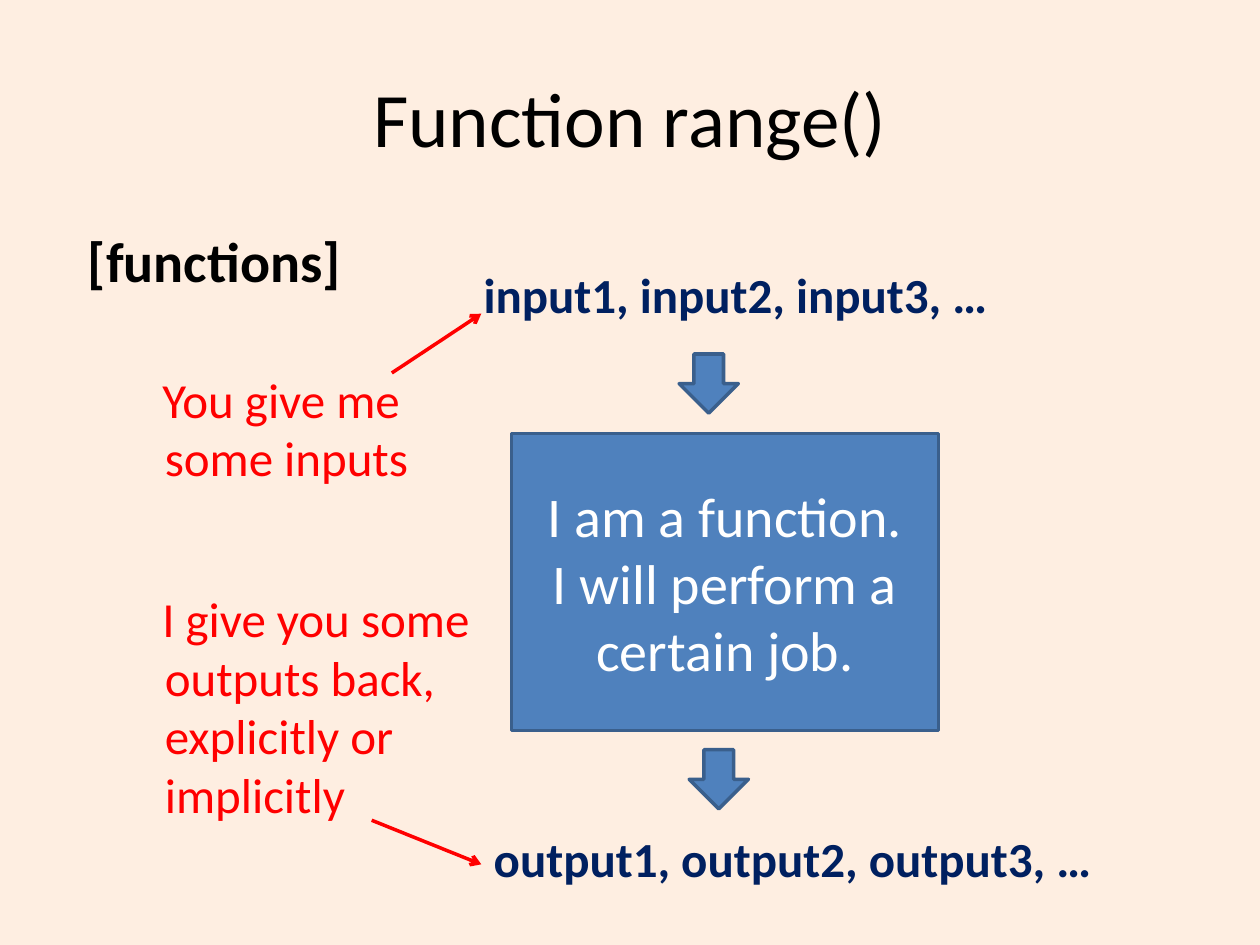
import dataclasses
import pptx
import pptx.util
import pptx.dml.color
import pptx.enum.shapes
import pptx.enum.text
import pptx.oxml
import pptx.oxml.ns

SHAPE = pptx.enum.shapes.MSO_SHAPE
ALIGN = pptx.enum.text.PP_ALIGN
ANCHOR = pptx.enum.text.MSO_ANCHOR
CELL = pptx.util.Inches(0.1)  # grid of 100 columns by 75 rows


@dataclasses.dataclass(frozen=True)
class Theme:
    font: str = "Calibri"
    page: str = "FEEEE1"
    ink: str = "000000"
    navy: str = "002060"
    red: str = "FF0000"
    blue: str = "4F81BD"
    edge: str = "3A5F8C"
    white: str = "FFFFFF"
    title: int = 44
    large: int = 32
    body: int = 28
    line: int = 2


@dataclasses.dataclass(frozen=True)
class Box:
    """A region, in columns and rows of the grid."""
    x: float
    y: float
    w: float
    h: float

    def inner(self, x, y, w, h):
        return Box(self.x + x, self.y + y, w, h)

    def place(self):
        return [round(v * CELL) for v in (self.x, self.y, self.w, self.h)]


THEME = Theme()


def color(code):
    return pptx.dml.color.RGBColor.from_string(code)


def write(frame, lines, size, tint, bold=False, align=ALIGN.LEFT,
          anchor=ANCHOR.TOP, space=1.0, margin=0, indent=0):
    frame.word_wrap = True
    frame.auto_size = pptx.enum.text.MSO_AUTO_SIZE.NONE
    frame.vertical_anchor = anchor
    for i, text in enumerate(lines):
        para = frame.add_paragraph() if i else frame.paragraphs[0]
        para.alignment = align
        para.line_spacing = space
        props = para._p.get_or_add_pPr()
        props.set("marL", str(pptx.util.Inches(margin)))
        props.set("indent", str(pptx.util.Inches(indent)))
        run = para.add_run()
        run.text = text
        font = run.font
        font.name, font.size, font.bold = THEME.font, pptx.util.Pt(size), bold
        font.color.rgb = color(tint)


def label(slide, box, text, size, tint, **style):
    frame = slide.shapes.add_textbox(*box.place()).text_frame
    write(frame, [text], size, tint, **style)


def block(slide, kind, box):
    shape = slide.shapes.add_shape(kind, *box.place())
    shape.shadow.inherit = False
    shape.fill.solid()
    shape.fill.fore_color.rgb = color(THEME.blue)
    shape.line.color.rgb = color(THEME.edge)
    shape.line.width = pptx.util.Pt(THEME.line)
    return shape


def arrow(slide, box, start, end):
    ends = [round(v * CELL) for x, y in (start, end)
            for v in (box.x + x, box.y + y)]
    link = slide.shapes.add_connector(
        pptx.enum.shapes.MSO_CONNECTOR.STRAIGHT, *ends)
    link.line.color.rgb = color(THEME.red)
    link.line.width = pptx.util.Pt(THEME.line)
    space = pptx.oxml.ns.nsdecls("a")
    props = link._element.spPr
    props.get_or_add_ln().append(
        pptx.oxml.parse_xml(f'<a:tailEnd {space} type="arrow"/>'))
    props.append(pptx.oxml.parse_xml(f'<a:effectLst {space}/>'))


def heading(slide, box):
    title = slide.shapes.title
    title.left, title.top, title.width, title.height = box.place()
    write(title.text_frame, ["Function range()"], THEME.title, THEME.ink,
          align=ALIGN.CENTER, anchor=ANCHOR.MIDDLE)


def topic(slide, box):
    label(slide, box, "[functions]", THEME.large, THEME.ink,
          bold=True, margin=0.1)


def flow(slide, box):
    # Inputs and outputs
    for x, y, w, text in ((0, 0, 44.1, "input1, input2, input3, …"),
                          (0.8, 44.8, 61.8, "output1, output2, output3, …")):
        label(slide, box.inner(x, y, w, 5.5), text, THEME.body, THEME.navy,
              bold=True, space=0.9)
    # Function
    job = block(slide, SHAPE.RECTANGLE, box.inner(3.2, 13.4, 33.9, 23.6))
    write(job.text_frame,
          ["I am a function.", "I will perform a certain job."],
          THEME.large, THEME.white, align=ALIGN.CENTER, anchor=ANCHOR.MIDDLE)
    # Arrows into and out of it
    for x, y in ((16.5, 7.1), (17.3, 38.5)):
        block(slide, SHAPE.DOWN_ARROW, box.inner(x, y, 4.7, 4.7))


def notes(slide, box):
    # Remarks, each with a pointer to the flow
    for y, h, text, start, end in (
            (0, 11.8, "You give me some inputs",
             (22.8, 0.8), (29.9, -3.9)),
            (17.4, 19.7, "I give you some outputs back, explicitly or implicitly",
             (21.2, 36.3), (29.9, 39.8))):
        label(slide, box.inner(0, y, box.w, h), text, THEME.body, THEME.red,
              margin=0.38, indent=-0.02)
        arrow(slide, box, start, end)


def main():
    deck = pptx.Presentation()
    deck.slide_width, deck.slide_height = 100 * CELL, 75 * CELL
    slide = deck.slides.add_slide(deck.slide_layouts[5])
    fill = slide.background.fill
    fill.solid()
    fill.fore_color.rgb = color(THEME.page)
    heading(slide, Box(5, 3, 90, 12.5))
    topic(slide, Box(5, 17.5, 90, 57.5))
    flow(slide, Box(37.4, 21, 62.6, 50.3))
    notes(slide, Box(8.3, 28.8, 32.3, 37.1))
    deck.save("out.pptx")


if __name__ == "__main__":
    main()
